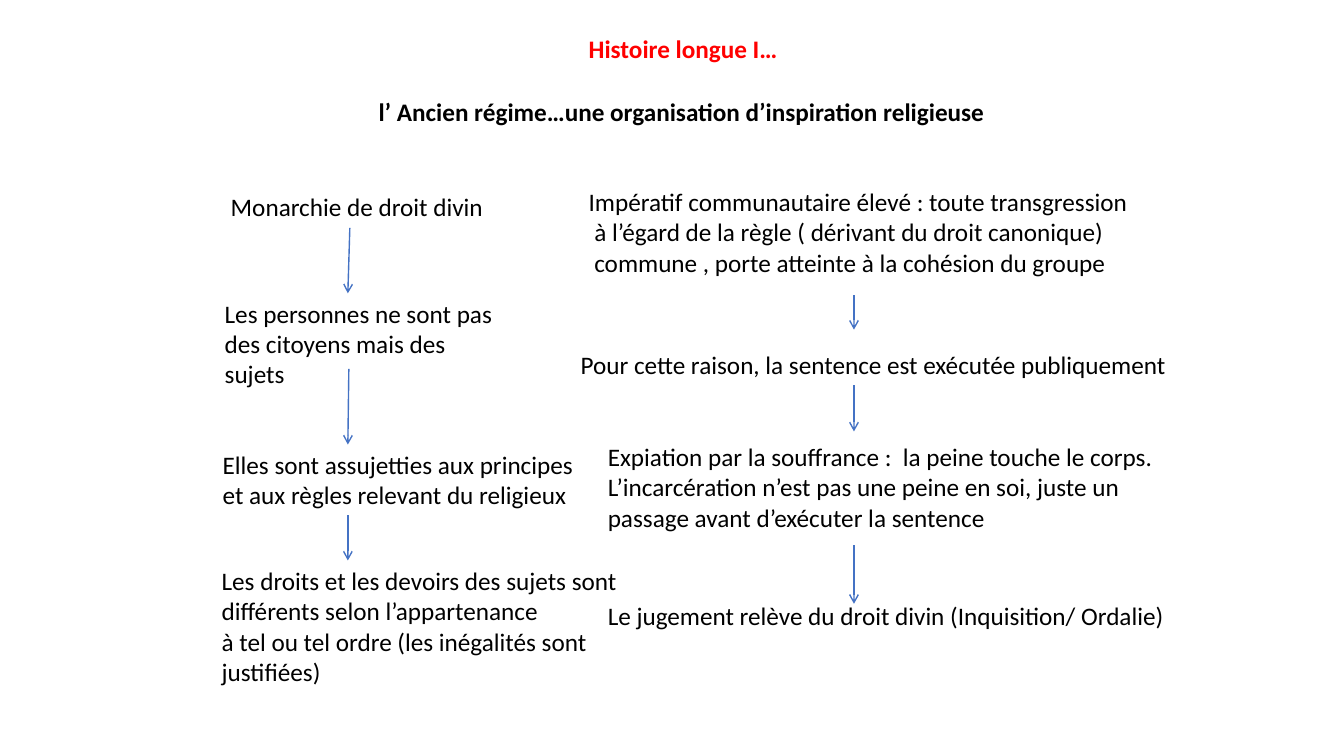
from lxml import etree
from pptx import Presentation
from pptx.dml.color import RGBColor
from pptx.enum import shapes, text
from pptx.oxml.ns import qn
from pptx.util import Inches, Pt

COLORS = {"title": "FF0000", "body": "000000", "arrow": "4472C4"}

presentation = Presentation()
presentation.slide_width = Inches(13.33)
presentation.slide_height = Inches(7.5)
slide = presentation.slides.add_slide(presentation.slide_layouts[6])


def add_text(left, top, width, height, lines, color="body", bold=False):
    box = slide.shapes.add_textbox(Inches(left), Inches(top), Inches(width), Inches(height))
    frame = box.text_frame
    frame.word_wrap = False
    frame.auto_size = text.MSO_AUTO_SIZE.SHAPE_TO_FIT_TEXT
    frame.text = "\n".join(lines)
    for paragraph in frame.paragraphs:
        paragraph.font.name = "Calibri"
        paragraph.font.size = Pt(18)
        paragraph.font.bold = bold
        paragraph.font.color.rgb = RGBColor.from_string(COLORS[color])


def add_arrow(start_x, start_y, end_x, end_y):
    arrow = slide.shapes.add_connector(
        shapes.MSO_CONNECTOR.STRAIGHT,
        Inches(start_x), Inches(start_y), Inches(end_x), Inches(end_y))
    arrow.line.color.rgb = RGBColor.from_string(COLORS["arrow"])
    arrow.line.width = Pt(1)
    etree.SubElement(arrow.line._get_or_add_ln(), qn("a:tailEnd"), type="arrow")
    etree.SubElement(arrow._element.spPr, qn("a:effectLst"))


add_text(5.74, 0.28, 2.09, 0.4, ["Histoire longue I…"], "title", True)
add_text(3.6, 0.91, 6.31, 0.4,
         [" l’ Ancien régime…une organisation d’inspiration religieuse"], bold=True)

statements = [
    (2.19, 1.85, 2.73, 0.4, ["Monarchie de droit divin"]),
    (2.13, 2.91, 2.95, 1.01, ["Les personnes ne sont pas", "des citoyens mais des", "sujets"]),
    (2.11, 4.41, 3.71, 0.71, ["Elles sont assujetties aux principes",
                              "et aux règles relevant du religieux"]),
    (2.1, 5.56, 4.22, 1.31, ["Les droits et les devoirs des sujets sont",
                             "différents selon l’appartenance",
                             "à tel ou tel ordre (les inégalités sont",
                             "justifiées)"]),
    (5.74, 1.8, 5.6, 1.01, ["Impératif communautaire élevé : toute transgression",
                            " à l’égard de la règle ( dérivant du droit canonique)",
                            " commune , porte atteinte à la cohésion du groupe"]),
    (5.66, 3.42, 6.07, 0.4, ["Pour cette raison, la sentence est exécutée publiquement"]),
    (5.93, 4.33, 5.66, 1.01, ["Expiation par la souffrance :  la peine touche le corps.",
                              "L’incarcération n’est pas une peine en soi, juste un",
                              "passage avant d’exécuter la sentence"]),
    (5.93, 5.91, 5.77, 0.4, ["Le jugement relève du droit divin (Inquisition/ Ordalie)"]),
]
for statement in statements:
    add_text(*statement)

for start_x, start_y, end_y in [(3.47, 2.26, 2.91), (3.46, 3.66, 4.41), (3.45, 5.11, 5.56)]:
    add_arrow(start_x, start_y, 3.45, end_y)
for start_y, end_y in [(2.93, 3.27), (3.82, 4.28), (5.41, 5.99)]:
    add_arrow(8.47, start_y, 8.47, end_y)

presentation.save("out.pptx")
